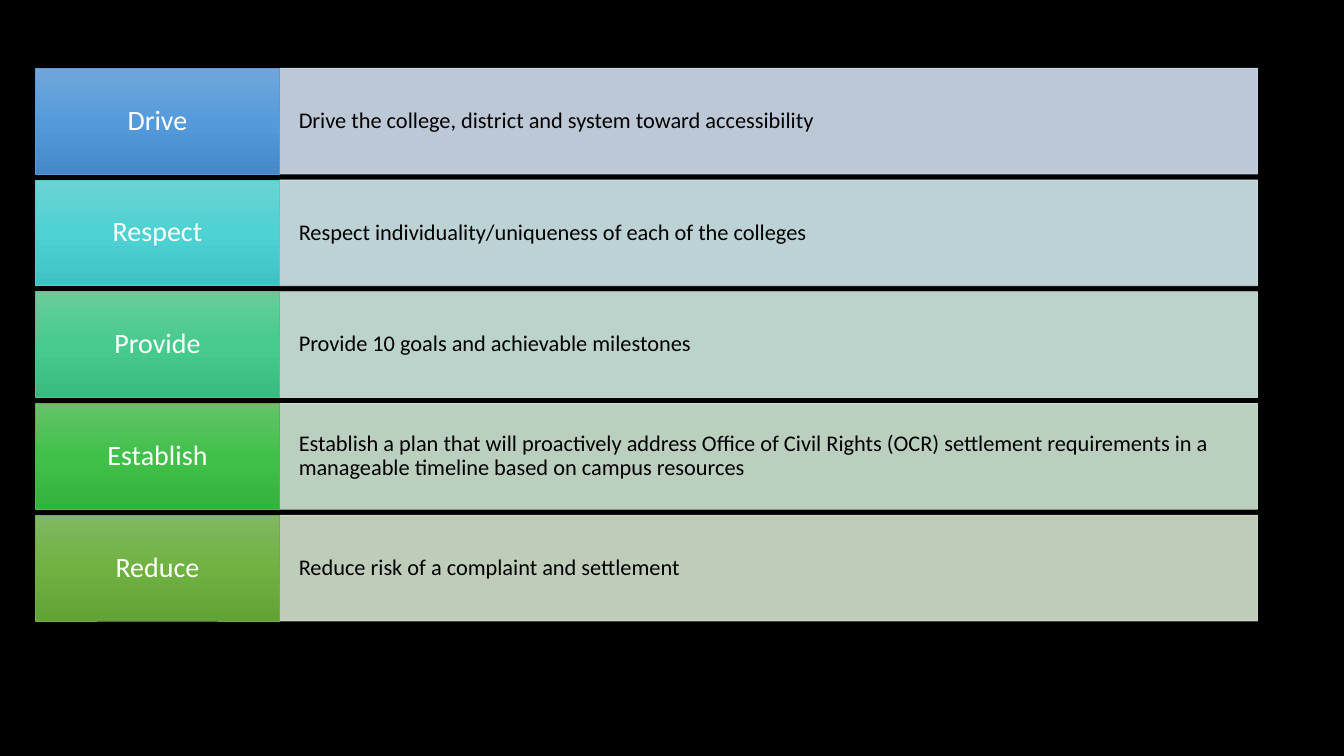
from copy import deepcopy

from lxml import etree
from pptx import Presentation
from pptx.dml.color import RGBColor
from pptx.enum.shapes import MSO_SHAPE
from pptx.enum.text import MSO_ANCHOR, PP_ALIGN
from pptx.oxml.ns import qn
from pptx.util import Cm, Pt

RECTANGLE = MSO_SHAPE.RECTANGLE
MIDDLE = MSO_ANCHOR.MIDDLE
LEFT, CENTER = PP_ALIGN.LEFT, PP_ALIGN.CENTER

BLACK = RGBColor(0x00, 0x00, 0x00)
WHITE = RGBColor(0xFF, 0xFF, 0xFF)
FONT = "Calibri"
PANEL_OPACITY = 90
BLANK_LAYOUT = 6

# Label gradient (top, middle, bottom), label outline, panel colour
BLUE = [RGBColor(0x71, 0xA6, 0xDB), RGBColor(0x55, 0x9B, 0xDB), RGBColor(0x44, 0x8A, 0xCA)]
BLUE_LINE, BLUE_PANEL = RGBColor(0x5B, 0x9B, 0xD5), RGBColor(0xD2, 0xDE, 0xEF)
CYAN = [RGBColor(0x6C, 0xD3, 0xD3), RGBColor(0x4E, 0xD2, 0xD3), RGBColor(0x3E, 0xC2, 0xC3)]
CYAN_LINE, CYAN_PANEL = RGBColor(0x54, 0xCC, 0xCD), RGBColor(0xD1, 0xE9, 0xED)
TEAL = [RGBColor(0x67, 0xCC, 0x9A), RGBColor(0x47, 0xCB, 0x8E), RGBColor(0x39, 0xBB, 0x7F)]
TEAL_LINE, TEAL_PANEL = RGBColor(0x4D, 0xC5, 0x8D), RGBColor(0xD0, 0xEA, 0xE1)
GREEN = [RGBColor(0x63, 0xC3, 0x68), RGBColor(0x42, 0xC1, 0x4A), RGBColor(0x34, 0xB2, 0x3D)]
GREEN_LINE, GREEN_PANEL = RGBColor(0x48, 0xBB, 0x4F), RGBColor(0xD0, 0xE6, 0xD4)
OLIVE = [RGBColor(0x81, 0xB8, 0x61), RGBColor(0x6F, 0xB2, 0x42), RGBColor(0x62, 0xA3, 0x36)]
OLIVE_LINE, OLIVE_PANEL = RGBColor(0x70, 0xAD, 0x47), RGBColor(0xD5, 0xE3, 0xCF)

GOALS = [
    ("Drive", "Drive the college, district and system toward accessibility",
     BLUE, BLUE_LINE, BLUE_PANEL),
    ("Respect", "Respect individuality/uniqueness of each of the colleges",
     CYAN, CYAN_LINE, CYAN_PANEL),
    ("Provide", "Provide 10 goals and achievable milestones",
     TEAL, TEAL_LINE, TEAL_PANEL),
    ("Establish", "Establish a plan that will proactively address Office of Civil Rights (OCR) "
     "settlement requirements in a manageable timeline based on campus resources",
     GREEN, GREEN_LINE, GREEN_PANEL),
    ("Reduce", "Reduce risk of a complaint and settlement",
     OLIVE, OLIVE_LINE, OLIVE_PANEL),
]


def add_box(slide, box, text, size, color, alignment, margins, line_color):
    """Add a rectangle with one vertically centred paragraph."""
    shape = slide.shapes.add_shape(RECTANGLE, *box)
    shape.shadow.inherit = False
    shape.line.color.rgb = line_color
    shape.line.width = Pt(0.5)
    frame = shape.text_frame
    frame.text = text
    frame.word_wrap = True
    frame.vertical_anchor = MIDDLE
    frame.margin_left = frame.margin_right = margins[0]
    frame.margin_top = frame.margin_bottom = margins[1]
    paragraph = frame.paragraphs[0]
    paragraph.alignment = alignment
    paragraph.line_spacing = 0.9
    font = paragraph.runs[0].font
    font.name, font.size = FONT, Pt(size)
    font.color.rgb = color
    return shape


def fill_gradient(shape, colors):
    """Fill from top to bottom with evenly spaced colours."""
    fill = shape.fill
    fill.gradient()
    fill.gradient_angle = 270
    stop_list = next(shape._element.spPr.iter(qn("a:gsLst")))
    while len(stop_list) < len(colors):
        stop_list.append(deepcopy(stop_list[-1]))
    for index, (stop, color) in enumerate(zip(fill.gradient_stops, colors)):
        stop.color.rgb = color
        stop.position = index / (len(colors) - 1)


def set_opacity(shape, percent):
    """Make fill and outline equally translucent."""
    for color in shape._element.spPr.iter(qn("a:srgbClr")):
        etree.SubElement(color, qn("a:alpha")).set("val", str(percent * 1000))


def add_goal_row(slide, left, top, width, height, goal):
    name, description, gradient, line_color, panel_color = goal
    label_width = int(width * 0.2)

    # Description panel
    panel_box = (left + label_width, top, width - label_width, height)
    panel = add_box(slide, panel_box, description, 16, BLACK, LEFT,
                    (Cm(0.48), Cm(0.68)), panel_color)
    panel.fill.solid()
    panel.fill.fore_color.rgb = panel_color
    set_opacity(panel, PANEL_OPACITY)

    # Gradient label
    label = add_box(slide, (left, top, label_width, height), name, 20, WHITE, CENTER,
                    (Cm(0.33), Cm(0.25)), line_color)
    fill_gradient(label, gradient)


def add_goal_list(slide, left, top, width, height):
    gap = Cm(0.15)
    row_height = (height - gap * (len(GOALS) - 1)) // len(GOALS)
    for index, goal in enumerate(GOALS):
        row_top = top + index * (row_height + gap)
        add_goal_row(slide, left, row_top, width, row_height, goal)


def main():
    presentation = Presentation()
    presentation.slide_width, presentation.slide_height = Cm(33.87), Cm(19.05)
    slide = presentation.slides.add_slide(presentation.slide_layouts[BLANK_LAYOUT])
    background = slide.background.fill
    background.solid()
    background.fore_color.rgb = BLACK
    add_goal_list(slide, Cm(0.89), Cm(1.72), Cm(30.8), Cm(13.93))
    presentation.save("out.pptx")


if __name__ == "__main__":
    main()
